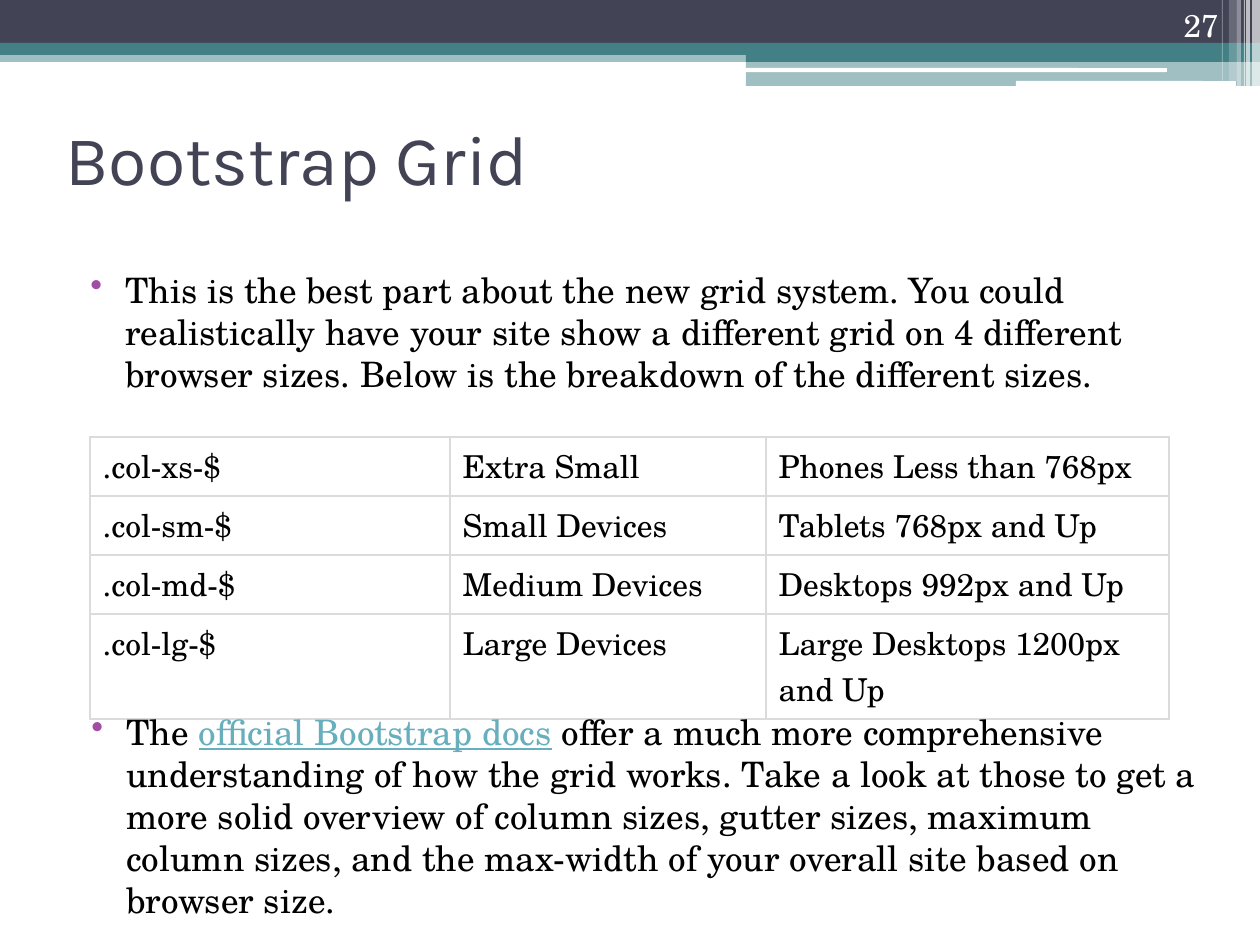
from dataclasses import dataclass

from lxml import etree
from pptx import Presentation
from pptx.dml.color import RGBColor
from pptx.enum.shapes import MSO_SHAPE
from pptx.enum.text import MSO_ANCHOR, PP_ALIGN
from pptx.oxml.ns import qn
from pptx.util import Emu, Pt

RECT, ROUND = MSO_SHAPE.RECTANGLE, MSO_SHAPE.ROUNDED_RECTANGLE
TOP, MIDDLE, BOTTOM = MSO_ANCHOR.TOP, MSO_ANCHOR.MIDDLE, MSO_ANCHOR.BOTTOM
LEFT, RIGHT = PP_ALIGN.LEFT, PP_ALIGN.RIGHT
SERIF, SANS = "TeX Gyre Schola", "Karla"
NAVY, TEAL, WHITE, BLACK = "424456", "438086", "FFFFFF", "000000"
LINK, PURPLE, GREY = "67AFBD", "A04DA3", "DBDBDB"


@dataclass
class Band:
    """A filled bar of the header."""
    x: int
    y: int
    w: int
    h: int
    hue: str
    alpha: int = 100
    kind: int = RECT


@dataclass
class Span:
    """A run of text with its colour."""
    text: str
    hue: str = BLACK
    line: bool = False


@dataclass
class Label:
    """A text box with one paragraph."""
    x: int
    y: int
    w: int
    h: int
    spans: list[Span]
    size: int = 20
    font: str = SERIF
    anchor: int = TOP
    align: int = LEFT
    bullet: bool = False


BANDS = [
    Band(0, 50, 1260, 12, TEAL, 50),
    Band(0, 0, 1260, 43, NAVY),
    Band(0, 43, 1260, 12, TEAL),
    Band(746, 49, 514, 13, TEAL),
    Band(746, 61, 514, 25, TEAL, 50),
    Band(745, 68, 422, 4, WHITE, kind=ROUND),
    Band(1016, 81, 220, 5, WHITE, kind=ROUND),
    Band(1252, 0, 8, 86, WHITE, 65),
    Band(1246, 0, 4, 86, WHITE, 65),
    Band(1244, 0, 1, 86, WHITE, 60),
    Band(1237, 0, 4, 86, WHITE, 40),
    Band(1229, 0, 8, 81, WHITE, 20),
    Band(1222, 0, 1, 81, WHITE, 30),
]

LABELS = [
    Label(53, 84, 1134, 147, [Span("Bootstrap Grid", NAVY)], 40, SANS, MIDDLE),
    Label(63, 262, 1134, 147, [Span(
        "This is the best part about the new grid system. You could "
        "realistically have your site show a different grid on 4 different "
        "browser sizes. Below is the breakdown of the different sizes.")],
        bullet=True),
    Label(1126, 0, 105, 50, [Span("27", WHITE)], 18, anchor=BOTTOM, align=RIGHT),
    Label(64, 704, 1154, 183, [
        Span("The "),
        Span("official Bootstrap docs", LINK, True),
        Span(" offer a much more comprehensive understanding of how the grid "
             "works. Take a look at those to get a more solid overview of "
             "column sizes, gutter sizes, maximum column sizes, and the "
             "max-width of your overall site based on browser size.")],
        bullet=True),
]

COLS = [360, 316, 403]
ROWS = [59, 59, 59, 105]
SIZES = [
    (".col-xs-$", "Extra Small", "Phones Less than 768px"),
    (".col-sm-$", "Small Devices", "Tablets 768px and Up"),
    (".col-md-$", "Medium Devices", "Desktops 992px and Up"),
    (".col-lg-$", "Large Devices", "Large Desktops 1200px and Up"),
]


def px(num: int) -> Emu:
    """Turn pixels into EMU."""
    return Emu(round(num * 914400 / 126))


def rgb(hue: str) -> RGBColor:
    """Turn a hex string into a colour."""
    return RGBColor.from_string(hue)


def paint(fill, hue: str) -> None:
    """Set a solid fill."""
    fill.solid()
    fill.fore_color.rgb = rgb(hue)


def style(run, size: int, font: str, hue: str) -> None:
    """Set the font of a run."""
    run.font.size = Pt(size)
    run.font.name = font
    run.font.color.rgb = rgb(hue)


def draw_band(slide, band: Band) -> None:
    """Draw one header bar."""
    shape = slide.shapes.add_shape(
        band.kind, px(band.x), px(band.y), px(band.w), px(band.h))
    shape.shadow.inherit = False
    shape.line.fill.background()
    paint(shape.fill, band.hue)
    if band.alpha < 100:
        tint = shape.fill._xPr.find(".//" + qn("a:srgbClr"))
        etree.SubElement(tint, qn("a:alpha"), val=str(band.alpha * 1000))


def add_bullet(para) -> None:
    """Give a paragraph a hanging purple bullet."""
    para.space_before = Pt(3)
    props = para._p.get_or_add_pPr()
    props.set("marL", str(px(50)))
    props.set("indent", str(-px(35)))
    tint = etree.SubElement(props, qn("a:buClr"))
    etree.SubElement(tint, qn("a:srgbClr"), val=PURPLE)
    etree.SubElement(props, qn("a:buChar"), char="•")


def draw_label(slide, label: Label) -> None:
    """Draw one text box."""
    box = slide.shapes.add_textbox(
        px(label.x), px(label.y), px(label.w), px(label.h))
    frame = box.text_frame
    frame.word_wrap = True
    frame.vertical_anchor = label.anchor
    para = frame.paragraphs[0]
    para.alignment = label.align
    if label.bullet:
        add_bullet(para)
    for span in label.spans:
        run = para.add_run()
        run.text = span.text
        style(run, label.size, label.font, span.hue)
        run.font.underline = span.line


def add_edges(cell) -> None:
    """Draw the four borders of a cell."""
    props = cell._tc.get_or_add_tcPr()
    for side in ("lnL", "lnR", "lnT", "lnB"):
        edge = etree.SubElement(props, qn("a:" + side), w=str(Pt(1)))
        fill = etree.SubElement(edge, qn("a:solidFill"))
        etree.SubElement(fill, qn("a:srgbClr"), val=GREY)


def draw_table(slide) -> None:
    """Draw the table of grid sizes."""
    table = slide.shapes.add_table(
        len(ROWS), len(COLS), px(90), px(437), px(sum(COLS)), px(sum(ROWS))).table
    table.first_row = table.horz_banding = False
    for col, width in zip(table.columns, COLS):
        col.width = px(width)
    for row, height, texts in zip(table.rows, ROWS, SIZES):
        row.height = px(height)
        for cell, text in zip(row.cells, texts):
            add_edges(cell)
            paint(cell.fill, WHITE)
            para = cell.text_frame.paragraphs[0]
            para.text = text
            para.line_spacing = Pt(26.3)
            style(para.runs[0], 18, SERIF, BLACK)


def main() -> None:
    """Build and save the slide."""
    deck = Presentation()
    deck.slide_width, deck.slide_height = px(1260), px(945)
    slide = deck.slides.add_slide(deck.slide_layouts[6])
    for band in BANDS:
        draw_band(slide, band)
    for label in LABELS[:-1]:
        draw_label(slide, label)
    draw_table(slide)
    draw_label(slide, LABELS[-1])
    deck.save("out.pptx")


if __name__ == "__main__":
    main()
